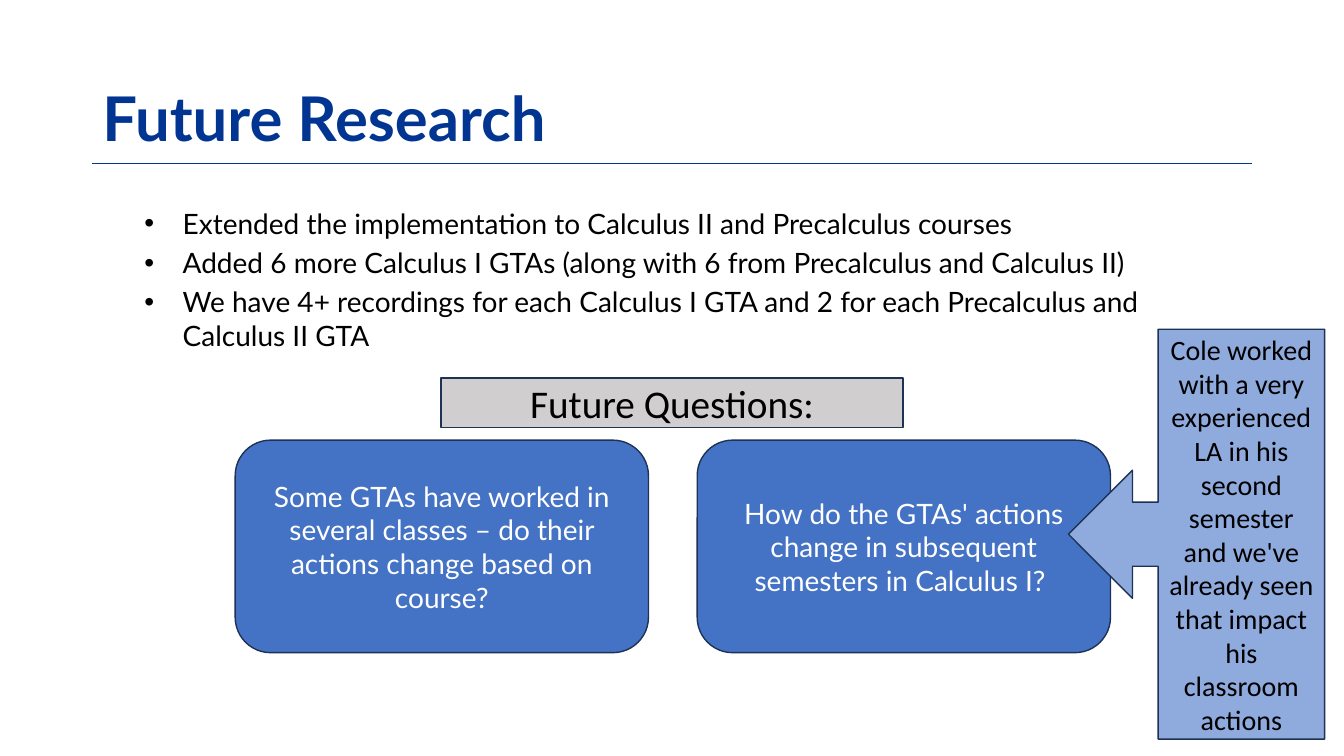
from pptx import Presentation, util as u
from pptx.dml.color import RGBColor
from pptx.enum import shapes, text
from pptx.oxml import parse_xml
from pptx.oxml.ns import nsdecls

deck = Presentation()
deck.slide_width, deck.slide_height = u.Inches(13.33), u.Inches(7.5)
slide = deck.slides.add_slide(deck.slide_layouts[6])
col, row = deck.slide_width / 160, deck.slide_height / 90


def paint(part, code):
    part.rgb = RGBColor.from_string(code)


def write(shape, lines, look, code, frame, para):
    body = shape.text_frame
    for key, val in {"word_wrap": True, **frame}.items():
        setattr(body, key, val)
    for num, line in enumerate(lines):
        item = body.paragraphs[0] if num == 0 else body.add_paragraph()
        item.text = line
        for key, val in para.items():
            setattr(item, key, val)
        for key, val in look.items():
            setattr(item.runs[0].font, key, val)
        paint(item.runs[0].font.color, code)


rule = slide.shapes.add_connector(
    shapes.MSO_CONNECTOR.STRAIGHT,
    *(int(n) for n in (11 * col, 19.45 * row, 149 * col, 19.45 * row)))
paint(rule.line.color, "013591")
rule.line.width = u.Pt(1)
rule._element.spPr.append(parse_xml(f"<a:effectLst {nsdecls('a')}/>"))

title = slide.shapes.add_textbox(
    *(int(n) for n in (11 * col, 7.5 * row, 138 * col, 11.5 * row)))
write(title, ["Future Research"],
      {"name": "Lato", "size": u.Pt(44), "bold": True}, "013591",
      {"vertical_anchor": text.MSO_ANCHOR.BOTTOM}, {"line_spacing": 0.9})

points = [
    "Extended the implementation to Calculus II and Precalculus courses",
    "Added 6 more Calculus I GTAs (along with 6 from Precalculus and Calculus II)",
    "We have 4+ recordings for each Calculus I GTA and 2 for each Precalculus and Calculus II GTA",
]
list_box = slide.shapes.add_textbox(
    *(int(n) for n in (16 * col, 24 * row, 128 * col, 48 * row)))
write(list_box, points, {"name": "Lato", "size": u.Pt(20)}, "000000",
      {"vertical_anchor": text.MSO_ANCHOR.TOP}, {"line_spacing": u.Pt(24)})
for num, item in enumerate(list_box.text_frame.paragraphs):
    item.space_before = u.Pt(4 if num else 0)
    props = item._p.get_or_add_pPr()
    props.set("marL", str(u.Inches(0.38)))
    props.set("indent", str(-u.Inches(0.38)))
    for tag in ('buFont {} typeface="Arial"', 'buChar {} char="•"'):
        props.append(parse_xml(f"<a:{tag.format(nsdecls('a'))}/>"))

kind = shapes.MSO_SHAPE
card = (49.2, 25.3)
boxes = [
    (kind.RECTANGLE, (52.5, 45, 55, 5.9), "D0CECE", "000000", "Calibri", 28,
     ["Future Questions:"]),
    (kind.ROUNDED_RECTANGLE, (28, 52.4, *card), "4472C4", "FFFFFF", "Lato", 20,
     ["Some GTAs have worked in several classes – do their actions change based on course?"]),
    (kind.ROUNDED_RECTANGLE, (28 + 55, 52.4, *card), "4472C4", "FFFFFF", "Lato", 20,
     ["How do the GTAs' actions change in subsequent semesters in Calculus I? "]),
    (kind.LEFT_ARROW_CALLOUT, (127.2, 39.2, 30.5, 48.8), "8FAADC", "000000", "Calibri", 20,
     ["Cole worked with a very experienced LA in his second",
      " semester ",
      "and we've already seen that impact his classroom actions"]),
]
for form, (x, y, wide, high), fill, ink, face, size, lines in boxes:
    box = slide.shapes.add_shape(
        form, *(int(n) for n in (x * col, y * row, wide * col, high * row)))
    box.shadow.inherit = False
    box.fill.solid()
    paint(box.fill.fore_color, fill)
    paint(box.line.color, "1E3256")
    box.line.width = u.Pt(1)
    write(box, lines, {"name": face, "size": u.Pt(size)}, ink,
          {"vertical_anchor": text.MSO_ANCHOR.MIDDLE},
          {"alignment": text.PP_ALIGN.CENTER})

deck.save("out.pptx")
